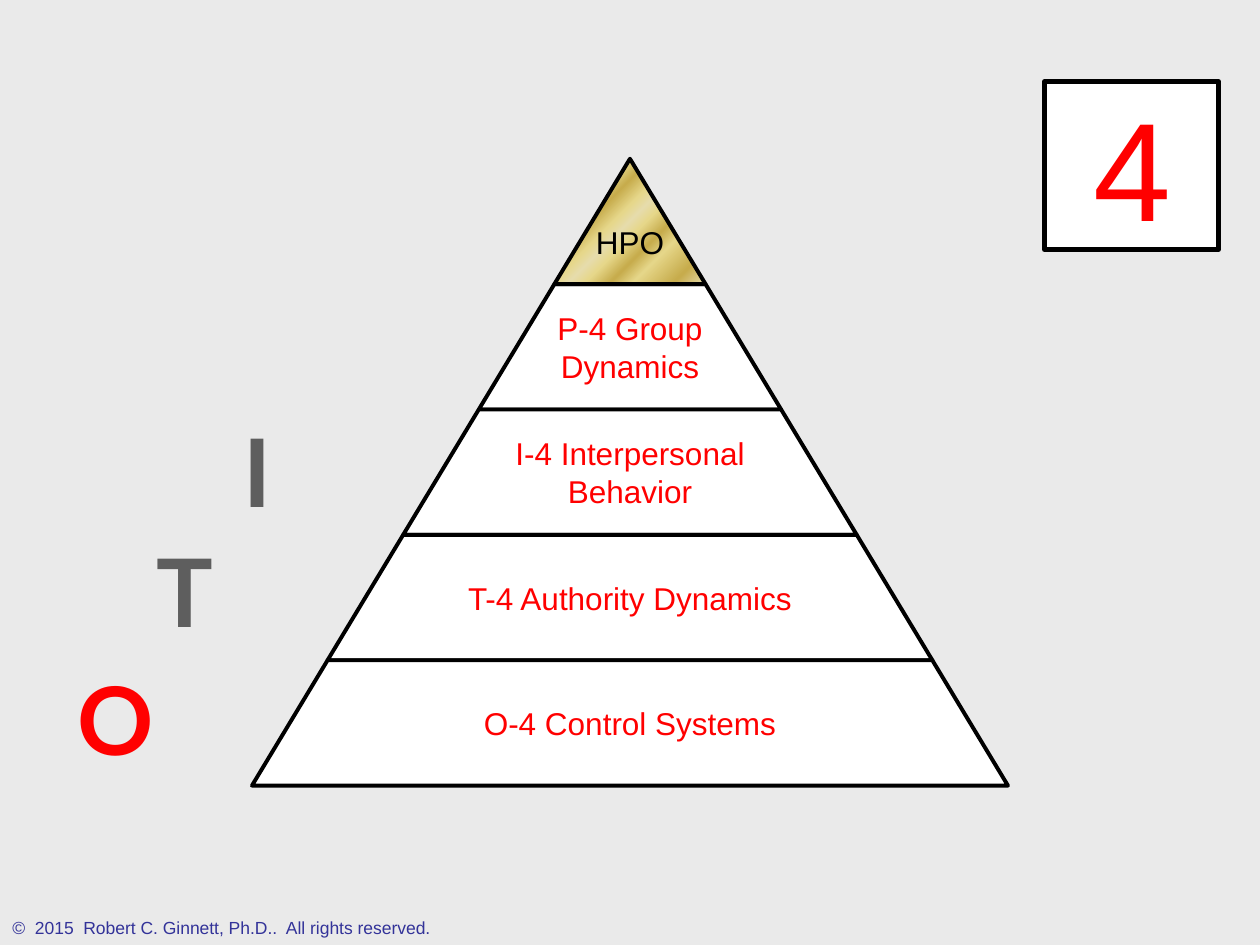
import pptx
import pptx.dml.color
import pptx.enum.shapes
import pptx.enum.text
import pptx.oxml.ns
import pptx.util
from dataclasses import dataclass
from lxml import etree

Inches = pptx.util.Inches
Align = pptx.enum.text.PP_ALIGN
qn = pptx.oxml.ns.qn


@dataclass(frozen=True)
class Theme:
    font: str = "Arial"
    letter_font: str = "Lato"
    background: str = "EAEAEA"
    paper: str = "FFFFFF"
    ink: str = "000000"
    accent: str = "FF0000"
    muted: str = "5E5E5E"
    footer: str = "333399"
    gold: tuple = (
        (0, "E6DCAC"), (12, "C7AC4C"), (27, "E6D78A"), (35, "C7AC4C"),
        (44, "E6D78A"), (50, "E6DCAC"), (56, "E6D78A"), (65, "C7AC4C"),
        (73, "E6D78A"), (88, "C7AC4C"), (100, "E6DCAC"))
    footer_size: int = 10
    label_size: int = 18
    letter_size: int = 54
    number_size: int = 80
    tier_line: float = 2.25
    box_line: float = 3


def rgb(value):
    return pptx.dml.color.RGBColor.from_string(value)


class Page:
    def __init__(self, deck, theme):
        self.theme = theme
        self.slide = deck.slides.add_slide(deck.slide_layouts[6])
        background = self.slide.background.fill
        background.solid()
        background.fore_color.rgb = rgb(theme.background)

    def finish(self, shape, line_width):
        shape.shadow.inherit = False
        shape.fill.solid()
        shape.fill.fore_color.rgb = rgb(self.theme.paper)
        shape.line.color.rgb = rgb(self.theme.ink)
        shape.line.width = pptx.util.Pt(line_width)
        return shape

    def box(self, left, top, width, height):
        shape = self.slide.shapes.add_shape(
            pptx.enum.shapes.MSO_SHAPE.RECTANGLE,
            Inches(left), Inches(top), Inches(width), Inches(height))
        return self.finish(shape, self.theme.box_line)

    def outline(self, points):
        """Draw a closed polygon with rounded line joins."""
        corners = [(Inches(x), Inches(y)) for x, y in points]
        builder = self.slide.shapes.build_freeform(*corners[0])
        builder.add_line_segments(corners[1:], close=True)
        shape = self.finish(builder.convert_to_shape(), self.theme.tier_line)
        etree.SubElement(shape.line._get_or_add_ln(), qn("a:round"))
        return shape

    def gild(self, shape):
        """Fill a shape with the diagonal gold gradient."""
        shape.fill.gradient()
        gradient = shape._element.spPr.find(qn("a:gradFill"))
        stops = gradient.find(qn("a:gsLst"))
        for stop in list(stops):
            stops.remove(stop)
        for position, color in self.theme.gold:
            stop = etree.SubElement(stops, qn("a:gs"), pos=str(position * 1000))
            etree.SubElement(stop, qn("a:srgbClr"), val=color)
        gradient.find(qn("a:lin")).set("ang", str(45 * 60000))

    def text(self, words, left, top, width, height, size, color,
             font=None, bold=False, wrap=True, align=Align.CENTER):
        box = self.slide.shapes.add_textbox(
            Inches(left), Inches(top), Inches(width), Inches(height))
        frame = box.text_frame
        frame.text = words
        frame.word_wrap = wrap
        frame.auto_size = pptx.enum.text.MSO_AUTO_SIZE.SHAPE_TO_FIT_TEXT
        para = frame.paragraphs[0]
        para.alignment = align
        span = para.runs[0]
        span.font.name = font or self.theme.font
        span.font.size = pptx.util.Pt(size)
        span.font.bold = bold
        span.font.color.rgb = rgb(color)


def draw_pyramid(page):
    theme = page.theme
    center, apex, tier_height, half_step = 5, 1.26, 0.995, 0.6
    # level, label, label width, label height, label shift down
    tiers = [
        (1, "P-4 Group Dynamics", 1.96, 0.7, 0),
        (2, "I-4 Interpersonal Behavior", 2.35, 0.7, 0),
        (3, "T-4 Authority Dynamics", 3.46, 0.4, 0),
        (4, "O-4 Control Systems", 3.68, 0.4, 0),
        (0, "HPO", 1.51, 0.4, 0.16),
    ]
    for level, label, width, height, shift in tiers:
        top = apex + level * tier_height
        bottom = top + tier_height
        upper, lower = level * half_step, (level + 1) * half_step
        points = [(center - lower, bottom), (center - upper, top)]
        if level:
            points.append((center + upper, top))
        points.append((center + lower, bottom))
        tier = page.outline(points)
        if level == 0:
            page.gild(tier)
        page.text(label, center - width / 2, (top + bottom - height) / 2 + shift,
                  width, height, theme.label_size,
                  theme.accent if level else theme.ink)


def main():
    theme = Theme()
    deck = pptx.Presentation()
    deck.slide_width, deck.slide_height = Inches(10), Inches(7.5)
    page = Page(deck, theme)

    page.text("©  2015  Robert C. Ginnett, Ph.D..  All rights reserved.",
              0, 7.23, 3.55, 0.27, theme.footer_size, theme.footer,
              wrap=False, align=Align.LEFT)
    draw_pyramid(page)
    page.box(8.29, 0.65, 1.38, 1.33)
    page.text("4", 8.31, 0.6, 1.36, 1.43, theme.number_size, theme.accent)

    for letter, left, top, width, color in [
            ("I", 1.75, 3.23, 0.58, theme.muted),
            ("T", 1.09, 4.18, 0.75, theme.muted),
            ("O", 0.52, 5.2, 0.8, theme.accent)]:
        page.text(letter, left, top, width, 1.01, theme.letter_size, color,
                  font=theme.letter_font, bold=True, wrap=False)

    deck.save("out.pptx")


if __name__ == "__main__":
    main()
